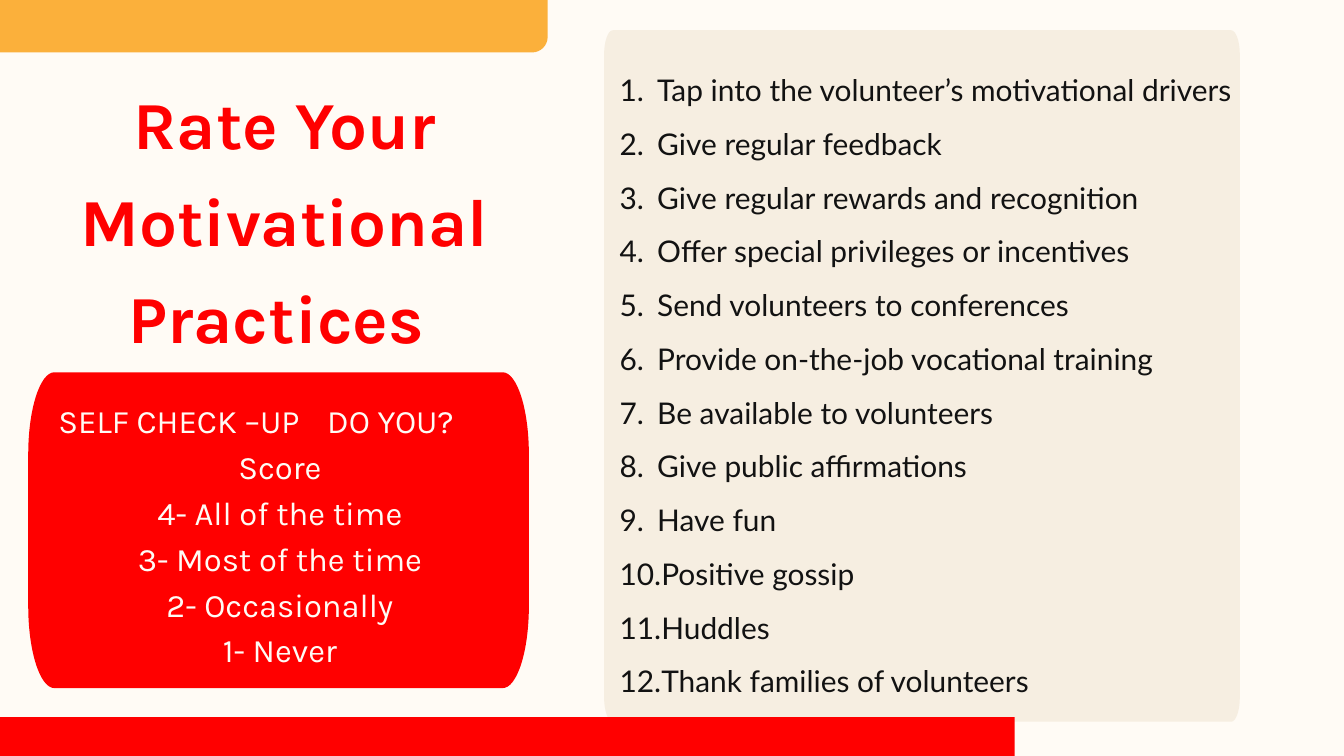
from lxml import etree
from pptx import Presentation
from pptx.dml.color import RGBColor
from pptx.enum.shapes import MSO_SHAPE
from pptx.enum.text import MSO_ANCHOR, MSO_AUTO_SIZE, PP_ALIGN
from pptx.oxml.ns import qn
from pptx.util import Inches, Pt

RECTANGLE = MSO_SHAPE.RECTANGLE
TOP = MSO_ANCHOR.TOP
FIT_SHAPE = MSO_AUTO_SIZE.SHAPE_TO_FIT_TEXT
LEFT, CENTER = PP_ALIGN.LEFT, PP_ALIGN.CENTER

COLUMNS, ROWS = 20, 11.25
CREAM, BEIGE, RED, ORANGE, INK = "FFFBF5", "F6EEE1", "FF0000", "FBB03B", "121212"
HEADING_FONT, LIST_FONT = "Karla", "Lato"
CURVE = 0.45

PRACTICES = [
    "Tap into the volunteer’s motivational drivers",
    "Give regular feedback",
    "Give regular rewards and recognition",
    "Offer special privileges or incentives",
    "Send volunteers to conferences",
    "Provide on-the-job vocational training",
    "Be available to volunteers",
    "Give public affirmations",
    "Have fun",
    "Positive gossip",
    "Huddles",
    "Thank families of volunteers",
]
SCORES = [
    "SELF CHECK –UP\tDO YOU?",
    "Score",
    "4- All of the time",
    "3- Most of the time",
    "2- Occasionally",
    "1- Never",
]


def color(value):
    return RGBColor.from_string(value)


class SlideBuilder:
    """Draws styled elements on one slide, measured in grid columns and rows."""

    def __init__(self, deck):
        self.column = deck.slide_width / COLUMNS
        self.row = deck.slide_height / ROWS
        self.page = deck.slides.add_slide(deck.slide_layouts[1])
        self.page.background.fill.solid()
        self.page.background.fill.fore_color.rgb = color(CREAM)

    def place(self, left, top, width, height):
        return (round(left * self.column), round(top * self.row),
                round(width * self.column), round(height * self.row))

    def paint(self, shape, fill):
        shape.shadow.inherit = False
        shape.fill.solid()
        shape.fill.fore_color.rgb = color(fill)
        shape.line.fill.background()

    def bar(self, area, fill):
        self.paint(self.page.shapes.add_shape(RECTANGLE, *self.place(*area)), fill)

    def panel(self, area, radius_x, radius_y, fill):
        left, top, width, height = area
        right, bottom = left + width, top + height
        corners = [
            (right, top, (-radius_x, 0), (0, radius_y)),
            (right, bottom, (0, -radius_y), (-radius_x, 0)),
            (left, bottom, (radius_x, 0), (0, -radius_y)),
            (left, top, (0, radius_y), (radius_x, 0)),
        ]
        points = []
        for x, y, entry, leave in corners:
            for (dx, dy), share in ((entry, 1), (entry, CURVE), (leave, CURVE), (leave, 1)):
                points.append(((x + dx * share) * self.column, (y + dy * share) * self.row))
        outline = self.page.shapes.build_freeform(*points[-1])
        outline.add_line_segments(points, close=True)
        shape = outline.convert_to_shape()
        lines = list(shape.element.iter(qn("a:lnTo")))
        for first in range(1, len(points), 4):
            start, *rest = lines[first:first + 3]
            curve = etree.Element(qn("a:cubicBezTo"))
            start.addprevious(curve)
            for line in (start, *rest):
                curve.append(line[0])
                line.getparent().remove(line)
        self.paint(shape, fill)

    def text(self, box, area, lines, font, size, fill, spacing, align=CENTER, bold=False):
        self.page.shapes.element.append(box.element)
        box.left, box.top, box.width, box.height = self.place(*area)
        frame = box.text_frame
        frame.text = "\n".join(lines)
        frame.word_wrap = True
        frame.auto_size = FIT_SHAPE
        frame.vertical_anchor = TOP
        frame.margin_left = frame.margin_right = 0
        frame.margin_top = frame.margin_bottom = 0
        for para in frame.paragraphs:
            para.alignment = align
            para.line_spacing = spacing
            para.space_before = Pt(0)
            for span in para.runs:
                span.font.name = font
                span.font.size = Pt(size)
                span.font.bold = bold
                span.font.color.rgb = color(fill)
        return frame.paragraphs

    def title(self, area, lines):
        self.text(self.page.shapes.title, area, lines, HEADING_FONT, 72, RED,
                  Pt(104), bold=True)

    def numbered_list(self, area, lines):
        body = self.page.placeholders[1]
        for para in self.text(body, area, lines, LIST_FONT, 32, INK, 1.5, LEFT):
            para.level = 1
            properties = para._p.get_or_add_pPr()
            properties.set("marL", str(Inches(0.86)))
            properties.set("indent", str(Inches(-0.56)))
            etree.SubElement(properties, qn("a:buFontTx"))
            etree.SubElement(properties, qn("a:buAutoNum"), type="arabicPeriod")

    def score_key(self, area, lines):
        box = self.page.shapes.add_textbox(*self.place(*area))
        heading = self.text(box, area, lines, HEADING_FONT, 35.1, CREAM, Pt(49.1))[0]
        heading.alignment = LEFT
        properties = heading._p.get_or_add_pPr()
        properties.set("marL", str(Inches(0.12)))
        properties.set("indent", "0")
        tabs = etree.SubElement(properties, qn("a:tabLst"))
        etree.SubElement(tabs, qn("a:tab"), pos=str(Inches(3.98)), algn="l")


def main():
    deck = Presentation()
    deck.slide_width, deck.slide_height = Inches(COLUMNS), Inches(ROWS)
    slide = SlideBuilder(deck)
    slide.title((1.14, 0.98, 6.19, 4.3), ["Rate Your", "Motivational Practices "])
    slide.panel((8.99, 0.45, 9.46, 10.29), 0.13, 0.36, BEIGE)
    slide.numbered_list((8.92, 0.8, 10.81, 10.5), PRACTICES)
    slide.panel((0.42, 5.54, 7.45, 4.7), 0.39, 1.22, RED)
    slide.score_key((0.75, 5.87, 6.83, 4.09), SCORES)
    slide.panel((-3.91, -0.78, 12.06, 1.56), 0.23, 0.23, ORANGE)
    slide.bar((-1.01, 10.67, 16.11, 1.95), RED)
    deck.save("out.pptx")


if __name__ == "__main__":
    main()
